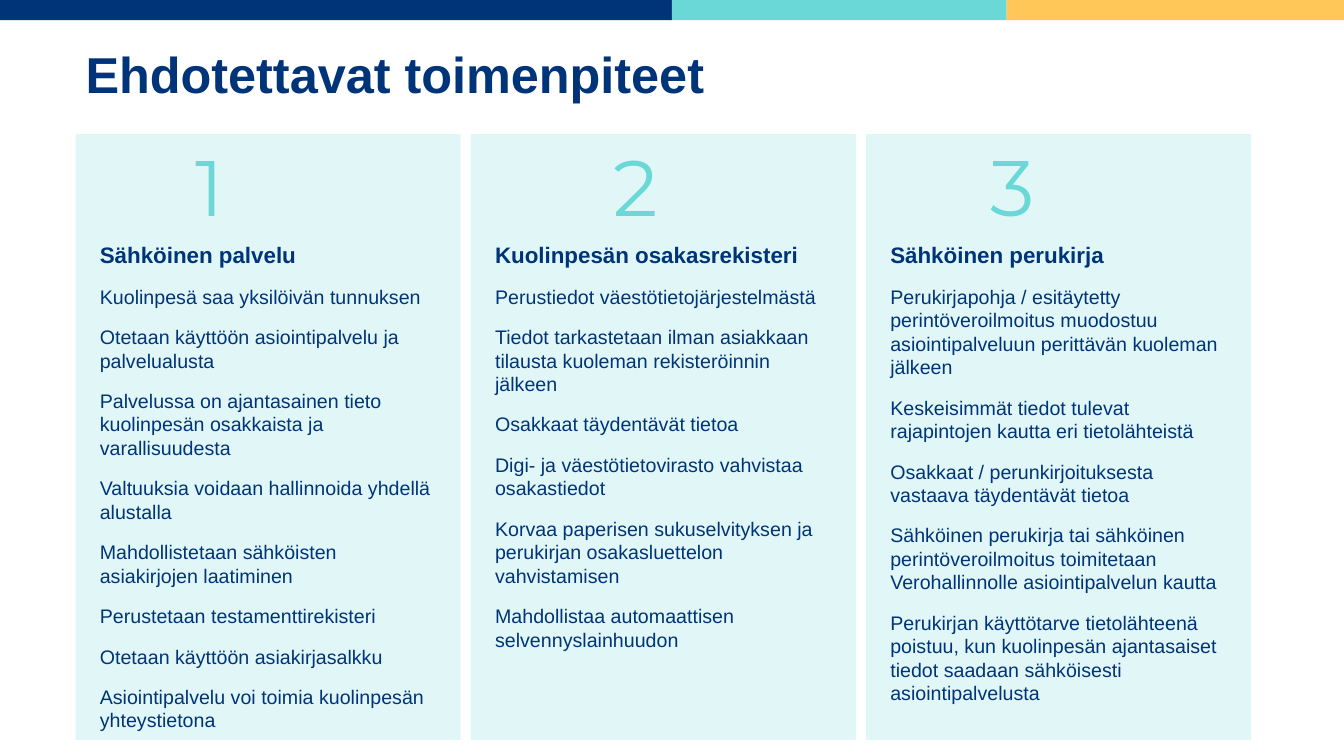
from pptx import Presentation
from pptx.dml.color import RGBColor
from pptx.enum.shapes import MSO_SHAPE
from pptx.enum.text import MSO_ANCHOR, PP_ALIGN
from pptx.util import Inches, Pt

NAVY = RGBColor(0x00, 0x34, 0x79)
TURQUOISE = RGBColor(0x69, 0xD8, 0xD7)
YELLOW = RGBColor(0xFF, 0xC6, 0x58)
PALE = RGBColor(0xE1, 0xF7, 0xF7)

# Slide and column grid, in inches
SLIDE_WIDTH, SLIDE_HEIGHT = 13.33, 7.5
LEFT, COLUMN_WIDTH, COLUMN_STEP = 0.75, 3.82, 3.92
COLUMN_TOP, COLUMN_HEIGHT = 1.33, 6.01

# Top band: colour and share of the slide's width
BAND = [(NAVY, 0.5), (TURQUOISE, 0.249), (YELLOW, 0.251)]

# Columns: offset of the number, heading, actions
COLUMNS = [
    (1.09, "Sähköinen palvelu", [
        "Kuolinpesä saa yksilöivän tunnuksen",
        "Otetaan käyttöön asiointipalvelu ja palvelualusta",
        "Palvelussa on ajantasainen tieto kuolinpesän osakkaista ja varallisuudesta",
        "Valtuuksia voidaan hallinnoida yhdellä alustalla",
        "Mahdollistetaan sähköisten asiakirjojen laatiminen",
        "Perustetaan testamenttirekisteri",
        "Otetaan käyttöön asiakirjasalkku",
        "Asiointipalvelu voi toimia kuolinpesän yhteystietona",
    ]),
    (1.32, "Kuolinpesän osakasrekisteri", [
        "Perustiedot väestötietojärjestelmästä",
        "Tiedot tarkastetaan ilman asiakkaan tilausta kuoleman rekisteröinnin jälkeen",
        "Osakkaat täydentävät tietoa",
        "Digi- ja väestötietovirasto vahvistaa osakastiedot",
        "Korvaa paperisen sukuselvityksen ja perukirjan osakasluettelon vahvistamisen",
        "Mahdollistaa automaattisen selvennyslainhuudon",
    ]),
    (1.14, "Sähköinen perukirja", [
        "Perukirjapohja / esitäytetty perintöveroilmoitus muodostuu "
        "asiointipalveluun perittävän kuoleman jälkeen",
        "Keskeisimmät tiedot tulevat rajapintojen kautta eri tietolähteistä",
        "Osakkaat / perunkirjoituksesta vastaava täydentävät tietoa",
        "Sähköinen perukirja tai sähköinen perintöveroilmoitus toimitetaan "
        "Verohallinnolle asiointipalvelun kautta",
        "Perukirjan käyttötarve tietolähteenä poistuu, kun kuolinpesän "
        "ajantasaiset tiedot saadaan sähköisesti asiointipalvelusta",
    ]),
]


def add_rectangle(slide, left, top, width, height, color):
    shape = slide.shapes.add_shape(
        MSO_SHAPE.RECTANGLE, Inches(left), Inches(top), Inches(width), Inches(height))
    shape.shadow.inherit = False
    shape.fill.solid()
    shape.fill.fore_color.rgb = color
    shape.line.fill.background()
    return shape


def add_run(paragraph, text, size, color=NAVY, font="Arial", bold=False):
    paragraph.alignment = PP_ALIGN.LEFT
    run = paragraph.add_run()
    run.text = text
    run.font.size = Pt(size)
    run.font.name = font
    run.font.bold = bold
    run.font.color.rgb = color


def add_text_box(slide, left, top, width, height, anchor=MSO_ANCHOR.TOP):
    box = slide.shapes.add_textbox(
        Inches(left), Inches(top), Inches(width), Inches(height))
    box.text_frame.word_wrap = True
    box.text_frame.vertical_anchor = anchor
    return box.text_frame.paragraphs[0]


def add_band(slide):
    left = 0
    for color, share in BAND:
        add_rectangle(slide, left, 0, share * SLIDE_WIDTH, 0.2, color)
        left += share * SLIDE_WIDTH


def add_column(slide, left, heading, actions):
    frame = add_rectangle(
        slide, left, COLUMN_TOP, COLUMN_WIDTH, COLUMN_HEIGHT, PALE).text_frame
    frame.word_wrap = True
    frame.vertical_anchor = MSO_ANCHOR.TOP
    frame.margin_left, frame.margin_right = Inches(0.24), Inches(0.2)
    frame.margin_top, frame.margin_bottom = Inches(1.06), Inches(0.05)
    first = frame.paragraphs[0]
    first.space_after = Pt(6)
    add_run(first, heading, 16, bold=True)
    for action in actions:
        paragraph = frame.add_paragraph()
        paragraph.space_before = paragraph.space_after = Pt(6)
        add_run(paragraph, action, 14)


def add_number(slide, left, number):
    paragraph = add_text_box(slide, left, 1.5, 0.59, 0.91)
    paragraph.line_spacing = 0.8
    add_run(paragraph, str(number), 56.1, TURQUOISE, "Montserrat")


def main():
    presentation = Presentation()
    presentation.slide_width = Inches(SLIDE_WIDTH)
    presentation.slide_height = Inches(SLIDE_HEIGHT)
    slide = presentation.slides.add_slide(presentation.slide_layouts[6])

    # Band and title
    add_band(slide)
    title = add_text_box(slide, LEFT, 0.16, 11.22, 0.92, MSO_ANCHOR.BOTTOM)
    add_run(title, "Ehdotettavat toimenpiteet", 36, bold=True)

    # Numbered columns
    for index, (number_offset, heading, actions) in enumerate(COLUMNS):
        left = LEFT + index * COLUMN_STEP
        add_column(slide, left, heading, actions)
        add_number(slide, left + number_offset, index + 1)

    presentation.save("out.pptx")


if __name__ == "__main__":
    main()
